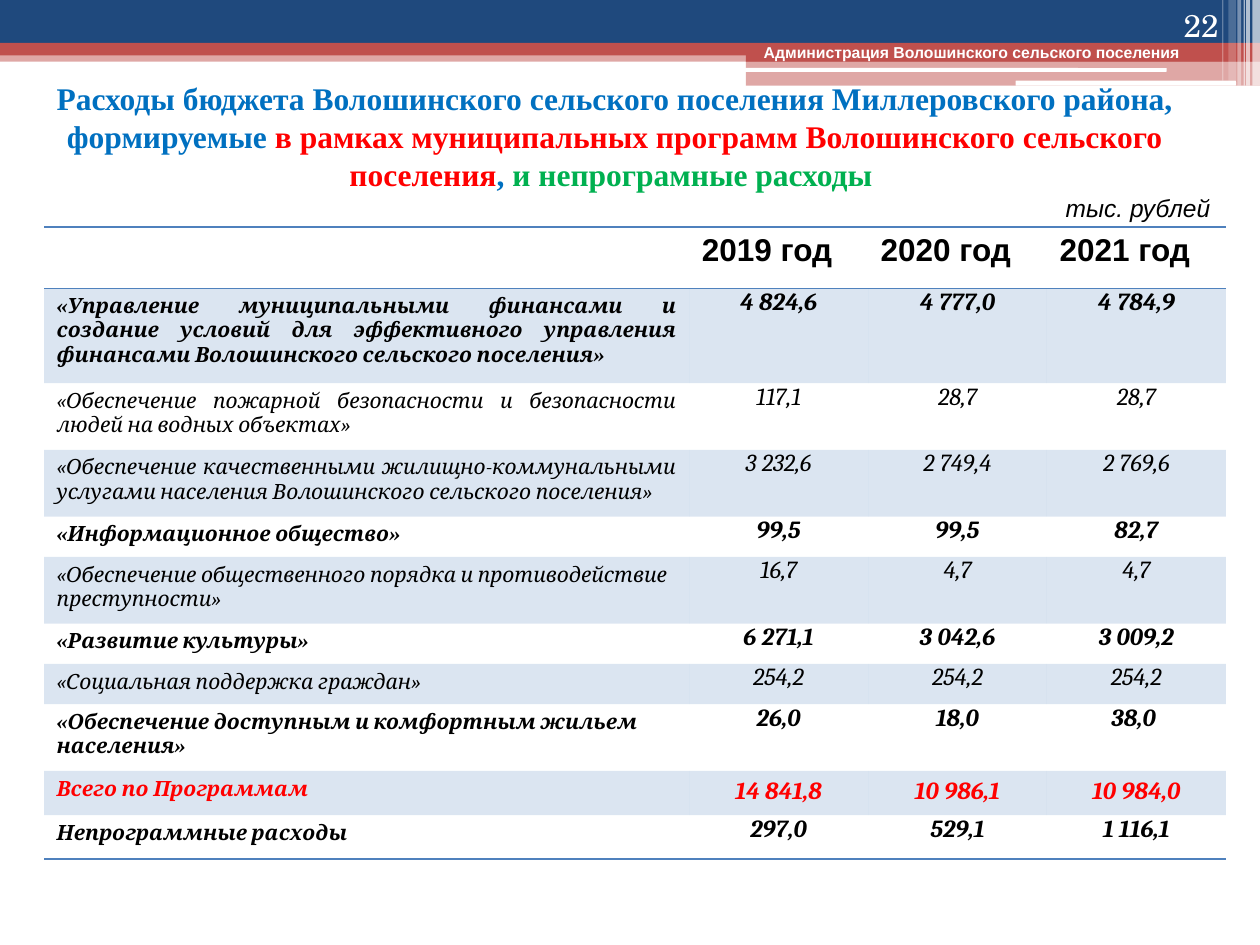
from lxml.etree import SubElement
from pptx import Presentation
from pptx.dml.color import RGBColor
from pptx.enum.shapes import MSO_SHAPE
from pptx.enum.text import MSO_ANCHOR, PP_ALIGN
from pptx.oxml import parse_xml
from pptx.oxml.ns import nsdecls, qn
from pptx.util import Inches, Pt

NAVY = RGBColor(0x1F, 0x49, 0x7D)
BRICK = RGBColor(0xC0, 0x50, 0x4D)
STEEL = RGBColor(0x4F, 0x81, 0xBD)
BLUE = RGBColor(0x00, 0x70, 0xC0)
RED = RGBColor(0xFF, 0x00, 0x00)
GREEN = RGBColor(0x00, 0xB0, 0x50)
WHITE = RGBColor(0xFF, 0xFF, 0xFF)
BLACK = RGBColor(0x00, 0x00, 0x00)


def set_fill(fill, color, opacity=100):
    """Fill with a solid colour; opacity is in percent."""
    fill.solid()
    fill.fore_color.rgb = color
    if opacity < 100:
        color_node = fill._xPr.find(qn("a:solidFill"))[0]
        SubElement(color_node, qn("a:alpha"), val=str(opacity * 1000))


def write(frame, pieces, align=PP_ALIGN.LEFT, anchor=MSO_ANCHOR.TOP,
          font="Arial", size=18, bold=False, italic=False):
    """Write one paragraph from (text, colour) pieces."""
    frame.word_wrap = True
    frame.vertical_anchor = anchor
    para = frame.paragraphs[0]
    para.alignment = align
    for text, color in pieces:
        span = para.add_run()
        span.text = text
        span.font.name = font
        span.font.size = Pt(size)
        span.font.bold = bold
        span.font.italic = italic
        span.font.color.rgb = color


deck = Presentation()
deck.slide_width, deck.slide_height = Inches(10), Inches(7.5)
page = deck.slides.add_slide(deck.slide_layouts[6])

# Header decoration: left, top, width, height, colour, opacity
BAR, ROUNDED = MSO_SHAPE.RECTANGLE, MSO_SHAPE.ROUNDED_RECTANGLE
decorations = [
    (BAR, 0, 0.4, 10, 0.09, BRICK, 50),
    (BAR, 0, 0, 10, 0.34, NAVY, 100),
    (BAR, 0, 0.34, 10, 0.1, BRICK, 100),
    (BAR, 5.92, 0.39, 4.08, 0.1, BRICK, 100),
    (BAR, 5.92, 0.48, 4.08, 0.2, BRICK, 50),
    (ROUNDED, 5.91, 0.54, 3.35, 0.03, WHITE, 100),
    (ROUNDED, 8.06, 0.64, 1.75, 0.04, WHITE, 100),
    (BAR, 9.94, 0, 0.06, 0.68, WHITE, 65),
    (BAR, 9.89, 0, 0.03, 0.68, WHITE, 65),
    (BAR, 9.87, 0, 0.01, 0.68, WHITE, 60),
    (BAR, 9.82, 0, 0.03, 0.68, WHITE, 40),
    (BAR, 9.75, 0, 0.06, 0.64, WHITE, 20),
    (BAR, 9.7, 0, 0.01, 0.64, WHITE, 30),
]
for kind, left, top, width, height, color, opacity in decorations:
    bar = page.shapes.add_shape(kind, Inches(left), Inches(top), Inches(width), Inches(height))
    bar.shadow.inherit = False
    bar.line.fill.background()
    set_fill(bar.fill, color, opacity)

title = page.shapes.add_textbox(Inches(0), Inches(0.6), Inches(9.76), Inches(0.96))
write(title.text_frame, [
    ("Расходы бюджета Волошинского сельского поселения Миллеровского района, формируемые ", BLUE),
    ("в рамках муниципальных программ Волошинского сельского поселения", RED),
    (", ", BLUE),
    ("и непрограмные расходы ", GREEN),
], align=PP_ALIGN.CENTER, anchor=MSO_ANCHOR.MIDDLE, font="Times New Roman", bold=True)

page_number = page.shapes.add_textbox(Inches(8.94), Inches(0), Inches(0.83), Inches(0.4))
write(page_number.text_frame, [("22", WHITE)], align=PP_ALIGN.RIGHT,
      anchor=MSO_ANCHOR.BOTTOM, font="TeX Gyre Schola")

# Budget table: label, values, bold, row height
years = ["2019 год", "2020 год", "2021 год"]
programs = [
    ("«Управление муниципальными финансами и создание условий для эффективного управления "
     "финансами Волошинского сельского поселения»", ["4 824,6", "4 777,0", "4 784,9"], True, 0.75),
    ("«Обеспечение пожарной безопасности и безопасности людей на водных объектах»",
     ["117,1", "28,7", "28,7"], False, 0.53),
    ("«Обеспечение качественными жилищно-коммунальными услугами населения Волошинского "
     "сельского поселения»", ["3 232,6", "2 749,4", "2 769,6"], False, 0.53),
    ("«Информационное общество»", ["99,5", "99,5", "82,7"], True, 0.32),
    ("«Обеспечение общественного порядка и противодействие преступности»",
     ["16,7", "4,7", "4,7"], False, 0.53),
    ("«Развитие культуры»", ["6 271,1", "3 042,6", "3 009,2"], True, 0.32),
    ("«Социальная поддержка граждан»", ["254,2", "254,2", "254,2"], False, 0.32),
    ("«Обеспечение доступным и комфортным жильем населения»",
     ["26,0", "18,0", "38,0 "], True, 0.53),
    ("Всего по Программам", ["14 841,8", "10 986,1", "10 984,0"], True, 0.35),
    ("Непрограммные расходы", ["297,0", "529,1", "1 116,1"], True, 0.35),
]
JUSTIFIED_ROWS = 3
TOTAL_ROW = 9
HEADER_HEIGHT = 0.49

table = page.shapes.add_table(len(programs) + 1, 4, Inches(0.35), Inches(1.8),
                              Inches(9.37), Inches(5.02)).table
table.first_row = False
table.horz_banding = False
for column, width in zip(table.columns, [5.12, 1.42, 1.42, 1.42]):
    column.width = Inches(width)

table.rows[0].height = Inches(HEADER_HEIGHT)
for column, year in enumerate(years, start=1):
    write(table.cell(0, column).text_frame, [(year, BLACK)], bold=True)

for row, (label, values, bold, height) in enumerate(programs, start=1):
    table.rows[row].height = Inches(height)
    color = RED if row == TOTAL_ROW else BLACK
    align = PP_ALIGN.JUSTIFY if row <= JUSTIFIED_ROWS else PP_ALIGN.LEFT
    write(table.cell(row, 0).text_frame, [(label, color)], align=align,
          font="Cambria", size=12, bold=bold, italic=True)
    for column, value in enumerate(values, start=1):
        cell = table.cell(row, column)
        write(cell.text_frame, [(value, color)], align=PP_ALIGN.CENTER,
              font="Cambria", size=14, bold=bold, italic=True)
        if row != TOTAL_ROW:
            cell.margin_left = cell.margin_right = Inches(0.07)
            cell.margin_top = cell.margin_bottom = Inches(0)

ruled_sides = {0: ["lnT", "lnB"], 1: ["lnT"], len(programs): ["lnB"]}
for row in range(len(programs) + 1):
    for column in range(4):
        cell = table.cell(row, column)
        if row % 2:
            set_fill(cell.fill, STEEL, 20)
        else:
            cell.fill.background()
        properties = cell._tc.get_or_add_tcPr()
        for position, side in enumerate(["lnL", "lnR", "lnT", "lnB"]):
            if side in ruled_sides.get(row, []):
                paint = f'<a:solidFill><a:srgbClr val="{STEEL}"/></a:solidFill>'
            else:
                paint = "<a:noFill/>"
            border = parse_xml(f'<a:{side} {nsdecls("a")} w="12700">{paint}</a:{side}>')
            properties.insert(position, border)

unit_note = page.shapes.add_textbox(Inches(8.36), Inches(1.48), Inches(1.42), Inches(0.34))
write(unit_note.text_frame, [("тыс. рублей", BLACK)], size=14, italic=True)

organisation = page.shapes.add_textbox(Inches(5.7), Inches(0.29), Inches(4.02), Inches(0.25))
write(organisation.text_frame, [("Администрация Волошинского сельского поселения", WHITE)],
      align=PP_ALIGN.CENTER, size=9, bold=True)

deck.save("out.pptx")
